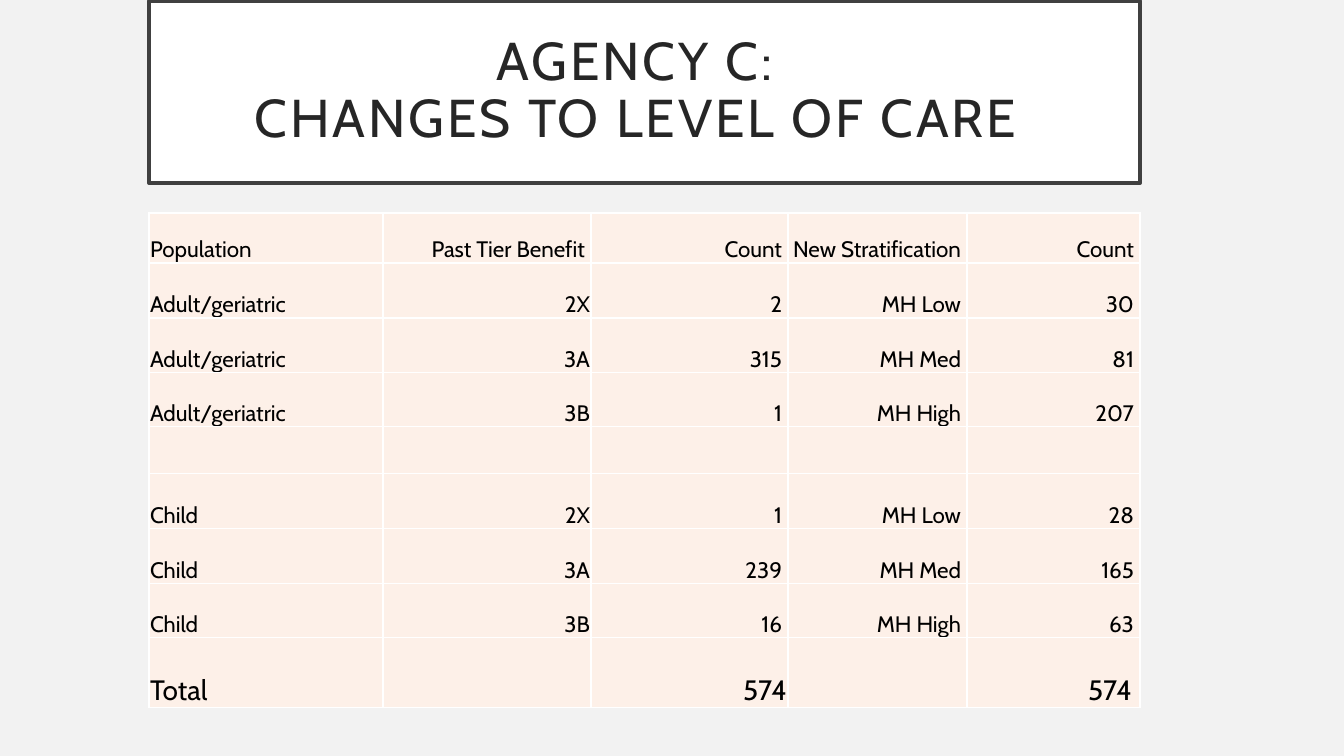
"""Build the Agency C slide on changes to level of care."""
from dataclasses import dataclass

from lxml.etree import SubElement
from pptx import Presentation
from pptx.dml.color import RGBColor as Rgb
from pptx.enum.text import MSO_ANCHOR as Anchor, MSO_AUTO_SIZE as AutoSize, PP_ALIGN as Align
from pptx.oxml.ns import qn
from pptx.util import Emu, Pt

TITLE = "AGENCY C:\vCHANGES TO LEVEL OF CARE"
HEADINGS = ["Population", "Past Tier Benefit", "Count", "New Stratification", "Count"]
TIERS = ["2X", "3A", "3B"]
STRATA = ["MH Low", "MH Med", "MH High"]
COUNTS = {
    "Adult/geriatric": ([2, 315, 1], [30, 81, 207]),
    "Child": ([1, 239, 16], [28, 165, 63]),
}
COLUMN_WIDTHS = [234, 208, 197, 179, 173]
ROW_HEIGHTS = [50, 55, 55, 54, 47, 55, 55, 54, 70]
HEADING_INSETS = [1, 6, 6, 6, 6]
DATA_INSETS = [1, 1, 6, 6, 6]
TOTAL_INSETS = [1, 1, 1, 6, 8]


@dataclass(frozen=True)
class Theme:
    font: str = "Cabin"
    backdrop: str = "F2F2F2"
    panel: str = "FFFFFF"
    frame: str = "404040"
    title: str = "262626"
    body: str = "000000"
    cell: str = "FDF0E8"
    grid: str = "FFFFFF"
    title_size: int = 38
    body_size: int = 16
    total_size: int = 20


def px(count):
    return Emu(round(count * 914400 / 100.8))


def paint(fill, color):
    fill.solid()
    fill.fore_color.rgb = Rgb.from_string(color)


class SlideBuilder:
    def __init__(self, deck, theme):
        self.theme = theme
        self.slide = deck.slides.add_slide(deck.slide_layouts[5])
        paint(self.slide.background.fill, theme.backdrop)

    def style(self, font, size, color):
        font.name = self.theme.font
        font.size = Pt(size)
        font.color.rgb = Rgb.from_string(color)

    def title(self, text, left, top, width, height):
        heading = self.slide.shapes.title
        heading.left, heading.top = px(left), px(top)
        heading.width, heading.height = px(width), px(height)
        paint(heading.fill, self.theme.panel)
        heading.line.color.rgb = Rgb.from_string(self.theme.frame)
        heading.line.width = Pt(3)
        frame = heading.text_frame
        frame.text = text
        frame.word_wrap = True
        frame.auto_size = AutoSize.NONE
        frame.vertical_anchor = Anchor.MIDDLE
        frame.margin_left, frame.margin_right = px(30), px(47)
        frame.margin_top = frame.margin_bottom = px(20)
        paragraph = frame.paragraphs[0]
        paragraph.alignment = Align.CENTER
        paragraph.line_spacing = 0.9
        for run in paragraph.runs:
            self.style(run.font, self.theme.title_size, self.theme.title)
            run.font._element.set("spc", "200")

    def table(self, rows, left, top):
        grid = self.slide.shapes.add_table(
            len(rows), len(COLUMN_WIDTHS), px(left), px(top),
            px(sum(COLUMN_WIDTHS)), px(sum(ROW_HEIGHTS))).table
        grid.first_row = grid.horz_banding = False
        for column, width in zip(grid.columns, COLUMN_WIDTHS):
            column.width = px(width)
        for row, height, (texts, insets, size) in zip(grid.rows, ROW_HEIGHTS, rows):
            row.height = px(height)
            for index, cell in enumerate(row.cells):
                align = Align.RIGHT if index else Align.LEFT
                self.cell(cell, str(texts[index]), align, insets[index], size)

    def cell(self, cell, text, align, right_inset, size):
        cell.margin_left = cell.margin_top = px(1)
        cell.margin_right, cell.margin_bottom = px(right_inset), 0
        cell.vertical_anchor = Anchor.BOTTOM
        properties = cell._tc.get_or_add_tcPr()
        for side in ("lnL", "lnR", "lnT", "lnB"):
            border = SubElement(properties, qn(f"a:{side}"), w=str(Pt(1)))
            solid = SubElement(border, qn("a:solidFill"))
            SubElement(solid, qn("a:srgbClr"), val=self.theme.grid)
        paint(cell.fill, self.theme.cell)
        paragraph = cell.text_frame.paragraphs[0]
        paragraph.alignment = align
        if text:
            paragraph.text = text
            self.style(paragraph.runs[0].font, size, self.theme.body)


def table_rows(theme):
    groups = []
    for population, (past, new) in COUNTS.items():
        groups.append([((population, *values), DATA_INSETS, theme.body_size)
                       for values in zip(TIERS, past, STRATA, new)])
    adults, children = groups
    past_total, new_total = (sum(map(sum, side)) for side in zip(*COUNTS.values()))
    return [
        (HEADINGS, HEADING_INSETS, theme.body_size),
        *adults,
        ([""] * len(HEADINGS), DATA_INSETS, theme.body_size),
        *children,
        (["Total", "", past_total, "", new_total], TOTAL_INSETS, theme.total_size),
    ]


def main():
    deck = Presentation()
    deck.slide_width, deck.slide_height = px(1344), px(756)
    theme = Theme()
    builder = SlideBuilder(deck, theme)
    builder.table(table_rows(theme), 149, 213)
    builder.title(TITLE, 149, 1, 991, 182)
    deck.save("out.pptx")


if __name__ == "__main__":
    main()
